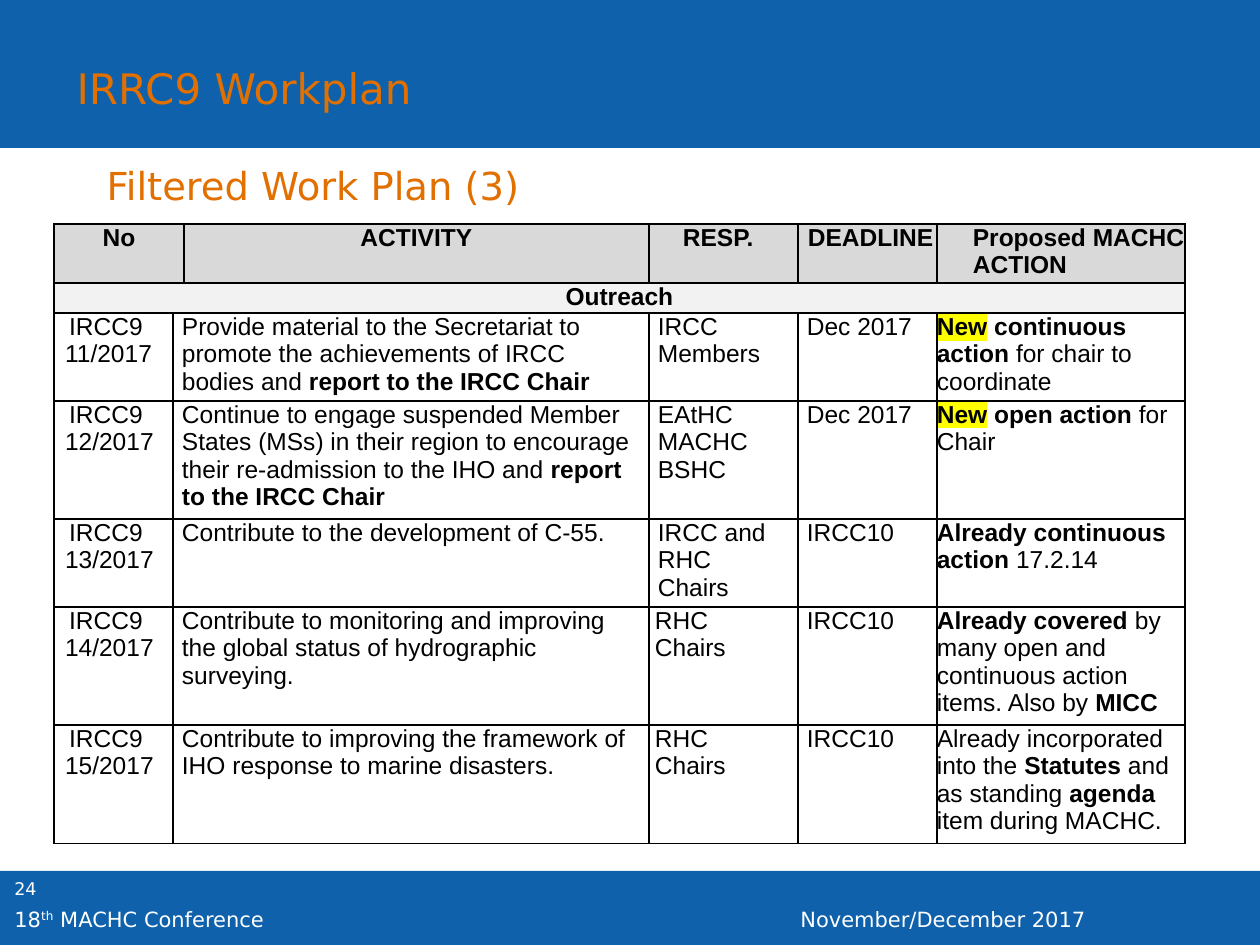
from pptx import Presentation, util as u
from pptx.dml.color import RGBColor
from pptx.enum import shapes, text
from pptx.oxml import parse_xml
from pptx.oxml.ns import nsdecls

PX = 914400 / 126
BLUE, ORANGE, WHITE, BLACK = "0E61AA", "E17000", "FFFFFF", "000000"
SANS, TABLE_FONT = "DejaVu Sans", "Arial"
HIGHLIGHTED = "New"
COLUMNS = [119, 11, 465, 149, 139, 248]
ROWS = [59, 30, 88, 118, 88, 118, 119]
HEADINGS = [(0, "No", None), (2, "ACTIVITY", None), (3, "RESP.", 34),
            (4, "DEADLINE", 10), (5, "Proposed MACHC ACTION", 36)]
RIGHT_MARGINS = {1: 15, 3: 20}
ACTIONS = [
    ("IRCC9 11/2017",
     "Provide material to the Secretariat to promote the achievements of IRCC bodies and "
     "*report to the IRCC Chair*",
     "IRCC\nMembers", 9, "Dec 2017", "*New** continuous action* for chair to coordinate"),
    ("IRCC9 12/2017",
     "Continue to engage suspended Member States (MSs) in their region to encourage their "
     "re-admission to the IHO and *report to the IRCC Chair*",
     "EAtHC MACHC BSHC", 9, "Dec 2017", "*New** open action* for Chair"),
    ("IRCC9 13/2017", "Contribute to the development of C-55.",
     "IRCC and RHC Chairs", 9, "IRCC10", "*Already continuous action* 17.2.14"),
    ("IRCC9 14/2017",
     "Contribute to monitoring and improving the global status of hydrographic surveying.",
     "RHC Chairs", 6, "IRCC10",
     "*Already covered* by many open and continuous action items. Also by *MICC*"),
    ("IRCC9 15/2017",
     "Contribute to improving the framework of IHO response to marine disasters.",
     "RHC Chairs", 6, "IRCC10",
     "Already incorporated into the *Statutes* and as standing *agenda* item during MACHC."),
]


def px(length):
    return u.Emu(round(length * PX))


def color(value):
    return RGBColor.from_string(value)


def set_font(para, name, size, value):
    para.font.name = name
    para.font.size = u.Pt(size)
    para.font.color.rgb = color(value)


def place(shape, box):
    shape.left, shape.top, shape.width, shape.height = map(px, box)


def add_bar(page, box):
    bar = page.shapes.add_shape(shapes.MSO_SHAPE.RECTANGLE, *map(px, box))
    bar.shadow.inherit = False
    bar.fill.solid()
    bar.fill.fore_color.rgb = color(BLUE)
    bar.line.fill.background()
    page.shapes._spTree.insert(2, bar._element)


def add_heading(placeholder, box, wording, size):
    place(placeholder, box)
    frame = placeholder.text_frame
    frame.word_wrap = False
    frame.auto_size = text.MSO_AUTO_SIZE.NONE
    frame.vertical_anchor = text.MSO_ANCHOR.MIDDLE
    para = frame.paragraphs[0]
    para.text = wording
    para.alignment = text.PP_ALIGN.LEFT
    para.space_before = u.Pt(0)
    properties = para._p.get_or_add_pPr()
    properties.set("marL", "0")
    properties.set("indent", "0")
    properties.append(parse_xml(f"<a:buNone {nsdecls('a')}/>"))
    set_font(para, SANS, size, ORANGE)


def add_label(page, box, wording, size, raised=""):
    frame = page.shapes.add_textbox(*map(px, box)).text_frame
    frame.word_wrap = True
    para = frame.paragraphs[0]
    for part in wording.partition(raised) if raised else [wording]:
        span = para.add_run()
        span.text = part
        if raised and part == raised:
            span._r.get_or_add_rPr().set("baseline", "30000")
    set_font(para, SANS, size, WHITE)


def add_header(page, box):
    left, top, width, height = box
    add_bar(page, box)
    add_heading(page.shapes.title, (left + 64, top + 56, 374, 63), "IRRC9 Workplan", 24)
    add_heading(page.placeholders[1], (left + 94, top + height + 7, 455, 60),
                "Filtered Work Plan (3)", 22)


def add_footer(page, box):
    left, top, width, height = box
    add_bar(page, box)
    add_label(page, (left + 2, top + 1, 98, 30), "24", 10)
    add_label(page, (left + 2, top + 29, 552, 30), "18th MACHC Conference", 12, "th")
    add_label(page, (left + 788, top + 29, 472, 30), "November/December 2017", 12)


def prepare_cell(cell):
    cell.margin_left = cell.margin_right = cell.margin_top = cell.margin_bottom = 0
    properties = cell._tc.get_or_add_tcPr()
    for side in "LRTB":
        properties.append(parse_xml(
            f'<a:ln{side} {nsdecls("a")} w="12700"><a:solidFill>'
            f'<a:srgbClr val="{BLACK}"/></a:solidFill></a:ln{side}>'))
    cell.fill.background()


def fill_cell(cell, value):
    cell.fill.solid()
    cell.fill.fore_color.rgb = color(value)


def write_cell(cell, wording, left=0, first=0, centred=False):
    frame = cell.text_frame
    frame.text = "\n" * wording.count("\n")
    for para, line in zip(frame.paragraphs, wording.split("\n")):
        properties = para._p.get_or_add_pPr()
        properties.set("marL", str(px(left)))
        properties.set("indent", str(px(first)))
        para.alignment = text.PP_ALIGN.CENTER if centred else text.PP_ALIGN.LEFT
        set_font(para, TABLE_FONT, 14, BLACK)
        for index, part in enumerate(line.split("*")):
            if not part:
                continue
            span = para.add_run()
            span.text = part
            span.font.bold = index % 2 == 1
            if part == HIGHLIGHTED:
                span._r.get_or_add_rPr().append(parse_xml(
                    f'<a:highlight {nsdecls("a")}><a:srgbClr val="FFFF00"/></a:highlight>'))


def add_workplan(page, box):
    table = page.shapes.add_table(len(ROWS), len(COLUMNS), *map(px, box)).table
    table.first_row = table.horz_banding = False
    for column, width in zip(table.columns, COLUMNS):
        column.width = px(width)
    for row, height in zip(table.rows, ROWS):
        row.height = px(height)
    for cell in table.iter_cells():
        prepare_cell(cell)

    table.cell(0, 0).merge(table.cell(0, 1))
    for column, wording, left in HEADINGS:
        cell = table.cell(0, column)
        fill_cell(cell, "D9D9D9")
        write_cell(cell, f"*{wording}*", left or 0, centred=left is None)

    section = table.cell(1, 0)
    section.merge(table.cell(1, len(COLUMNS) - 1))
    fill_cell(section, "F2F2F2")
    write_cell(section, "*Outreach*", centred=True)

    for row, (number, activity, owner, inset, deadline, proposal) in enumerate(ACTIONS, 2):
        table.cell(row, 1).merge(table.cell(row, 2))
        for column, margin in RIGHT_MARGINS.items():
            table.cell(row, column).margin_right = px(margin)
        write_cell(table.cell(row, 0), number, 11, 4)
        write_cell(table.cell(row, 1), activity, 9)
        write_cell(table.cell(row, 3), owner, inset)
        write_cell(table.cell(row, 4), deadline, 9)
        write_cell(table.cell(row, 5), proposal)


def main():
    deck = Presentation()
    deck.slide_width, deck.slide_height = px(1260), px(945)
    page = deck.slides.add_slide(deck.slide_layouts[1])
    add_header(page, (0, 0, 1260, 148))
    add_workplan(page, (54, 224, sum(COLUMNS), sum(ROWS)))
    add_footer(page, (0, 871, 1260, 74))
    deck.save("out.pptx")


if __name__ == "__main__":
    main()
